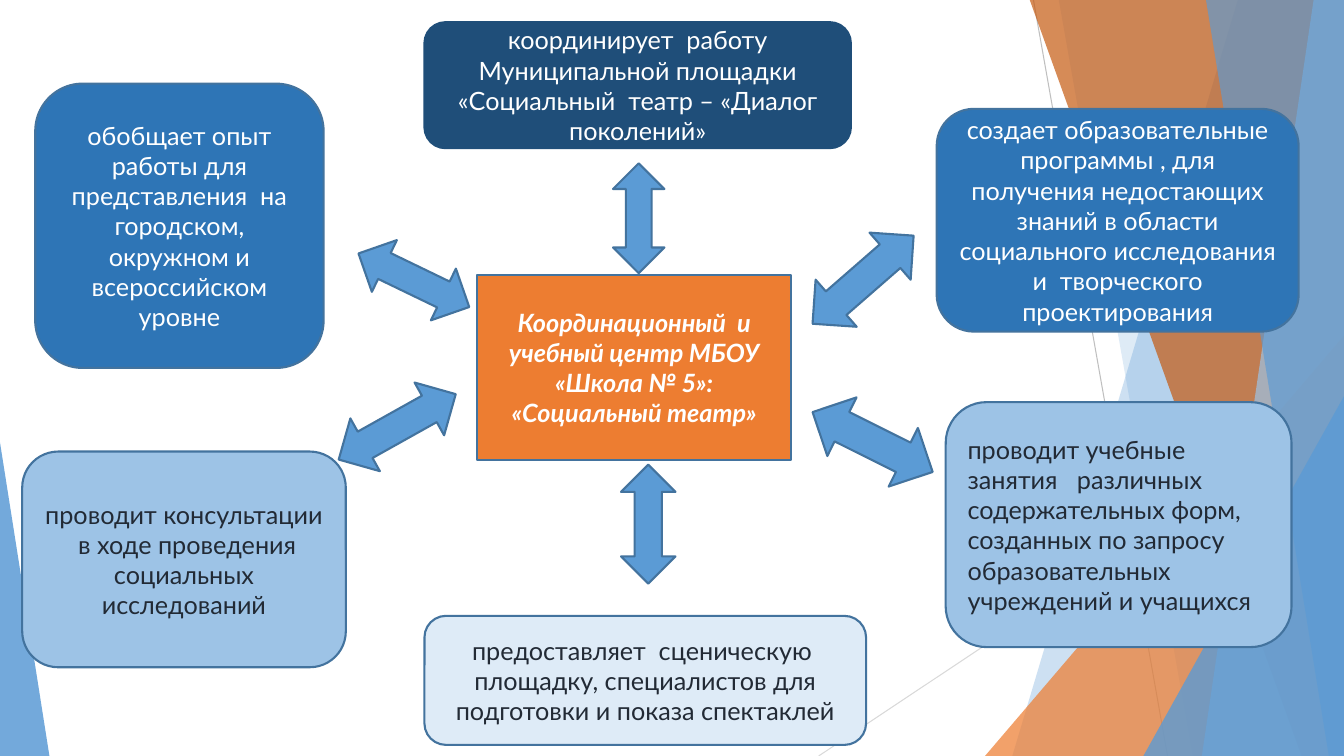
from lxml import etree
from pptx import Presentation
from pptx import util as u
from pptx.dml.color import RGBColor
from pptx.enum import shapes, text
from pptx.oxml.ns import qn

SCALE = 9144  # EMU in one px, 100 px to the inch
WIDTH, HEIGHT = 1333, 750
FONT, SIZE = "Lato", 18
BLUE, EDGE, NAVY, MID, PALE = "5B9BD5", "43739E", "1F4E79", "2E75B6", "9DC3E6"
WHITE, DARK, ORANGE = "FFFFFF", "222A35", "ED7D31"
CENTER, LEFT = text.PP_ALIGN.CENTER, text.PP_ALIGN.LEFT

# Background lines: start, end, colour
THIN_LINES = [
    ((1025, 0), (1158, 750), "BFBFBF"),
    ((1333, 403), (812, 750), "D9D9D9"),
]

# Background facets, back to front.
# Band: top x and bottom x of its left edge; it reaches the right slide edge.
# Triangle: left, top, width, apex position; it reaches the bottom slide edge.
FACETS = [
    ("band", (1228, 1004), BLUE, 30),
    ("band", (1050, 1183), BLUE, 20),
    ("triangle", (977, 333, 356, 1), ORANGE, 72),
    ("band", (1021, 1291), "C55A11", 70),
    ("band", (1303, 1192), PALE, 70),
    ("band", (1196, 1318), BLUE, 65),
    ("triangle", (1134, 393, 199, 1), BLUE, 80),
    ("triangle", (0, 439, 49, 0), BLUE, 85),
]

HUB = ("Координационный  и учебный центр МБОУ «Школа № 5»: «Социальный театр»",
       (473, 273, 312, 183))

# Double arrows: left, top, width, height, rotation
ARROWS = [
    (382, 217, 57, 122, 295.8),
    (608, 162, 51, 109, 0),
    (825, 211, 62, 133, 48.9),
    (833, 372, 65, 133, 296.5),
    (364, 357, 60, 133, 60.8),
    (616, 461, 54, 118, 0),
]

# Tasks: wording, place, fill, outline, text colour, alignment
TASKS = [
    ("координирует  работу Муниципальной площадки «Социальный  театр – «Диалог поколений»",
     (421, 22, 423, 125), NAVY, NAVY, WHITE, CENTER),
    ("обобщает опыт работы для представления  на городском, окружном и всероссийском уровне",
     (35, 83, 286, 282), MID, EDGE, WHITE, CENTER),
    ("проводит консультации  в ходе проведения социальных исследований",
     (22, 448, 321, 214), PALE, EDGE, DARK, CENTER),
    ("предоставляет  сценическую  площадку, специалистов для подготовки и показа спектаклей",
     (421, 611, 438, 128), "DEEBF7", EDGE, DARK, CENTER),
    ("проводит учебные занятия   различных содержательных форм, созданных по запросу  "
     "образовательных учреждений и учащихся",
     (938, 399, 343, 243), PALE, EDGE, DARK, LEFT),
    ("создает образовательные программы , для получения недостающих знаний в области "
     "социального исследования и  творческого проектирования",
     (929, 108, 359, 221), MID, EDGE, WHITE, CENTER),
]


def px(*lengths):
    return [u.Emu(length * SCALE) for length in lengths]


def color(value):
    return RGBColor.from_string(value)


def paint(shape, fill, line=None, opacity=100):
    shape.shadow.inherit = False
    shape.fill.solid()
    shape.fill.fore_color.rgb = color(fill)
    if opacity < 100:
        tint = shape.fill._xPr.find(qn("a:solidFill"))[0]
        etree.SubElement(tint, qn("a:alpha"), val=str(opacity * 1000))
    if line:
        shape.line.color.rgb = color(line)
        shape.line.width = u.Pt(1.5)
    else:
        shape.line.fill.background()


def add_preset(page, kind, place, fill, line=None, opacity=100):
    shape = page.shapes.add_shape(kind, *px(*place))
    paint(shape, fill, line, opacity)
    return shape


def write(box, words, ink, align=CENTER, strong=False):
    frame = box.text_frame
    frame.word_wrap = True
    frame.vertical_anchor = text.MSO_ANCHOR.MIDDLE
    para = frame.paragraphs[0]
    para.text = words
    para.alignment = align
    font = para.runs[0].font
    font.name, font.size = FONT, u.Pt(SIZE)
    font.bold = font.italic = strong
    font.color.rgb = color(ink)


def add_thin_line(page, start, end, ink):
    line = page.shapes.add_connector(shapes.MSO_CONNECTOR.STRAIGHT, *px(*start, *end))
    line.line.color.rgb = color(ink)
    line.line.width = u.Pt(0.75)
    etree.SubElement(line._element.spPr, qn("a:effectLst"))


def add_facet(page, kind, geometry, fill, opacity):
    if kind == "band":
        top_x, bottom_x = geometry
        builder = page.shapes.build_freeform(top_x, -1, scale=SCALE)
        builder.add_line_segments([(WIDTH, -1), (WIDTH, HEIGHT), (bottom_x, HEIGHT)], close=True)
        paint(builder.convert_to_shape(), fill, opacity=opacity)
    else:
        left, top, width, apex = geometry
        triangle = add_preset(page, shapes.MSO_SHAPE.ISOSCELES_TRIANGLE,
                              (left, top, width, HEIGHT - top), fill, opacity=opacity)
        triangle.adjustments[0] = apex


def main():
    deck = Presentation()
    deck.slide_width, deck.slide_height = px(WIDTH, HEIGHT)
    page = deck.slides.add_slide(deck.slide_layouts[6])

    # Background
    for thin_line in THIN_LINES:
        add_thin_line(page, *thin_line)
    for facet in FACETS:
        add_facet(page, *facet)

    # Hub in the middle
    words, place = HUB
    hub = add_preset(page, shapes.MSO_SHAPE.RECTANGLE, place, ORANGE, EDGE)
    write(hub, words, WHITE, strong=True)

    # Arrows around the hub
    for *place, rotation in ARROWS:
        arrow = add_preset(page, shapes.MSO_SHAPE.UP_DOWN_ARROW, place, BLUE, EDGE)
        arrow.rotation = rotation

    # Task boxes
    for words, place, fill, line, ink, align in TASKS:
        box = add_preset(page, shapes.MSO_SHAPE.ROUNDED_RECTANGLE, place, fill, line)
        write(box, words, ink, align)

    deck.save("out.pptx")


if __name__ == "__main__":
    main()
